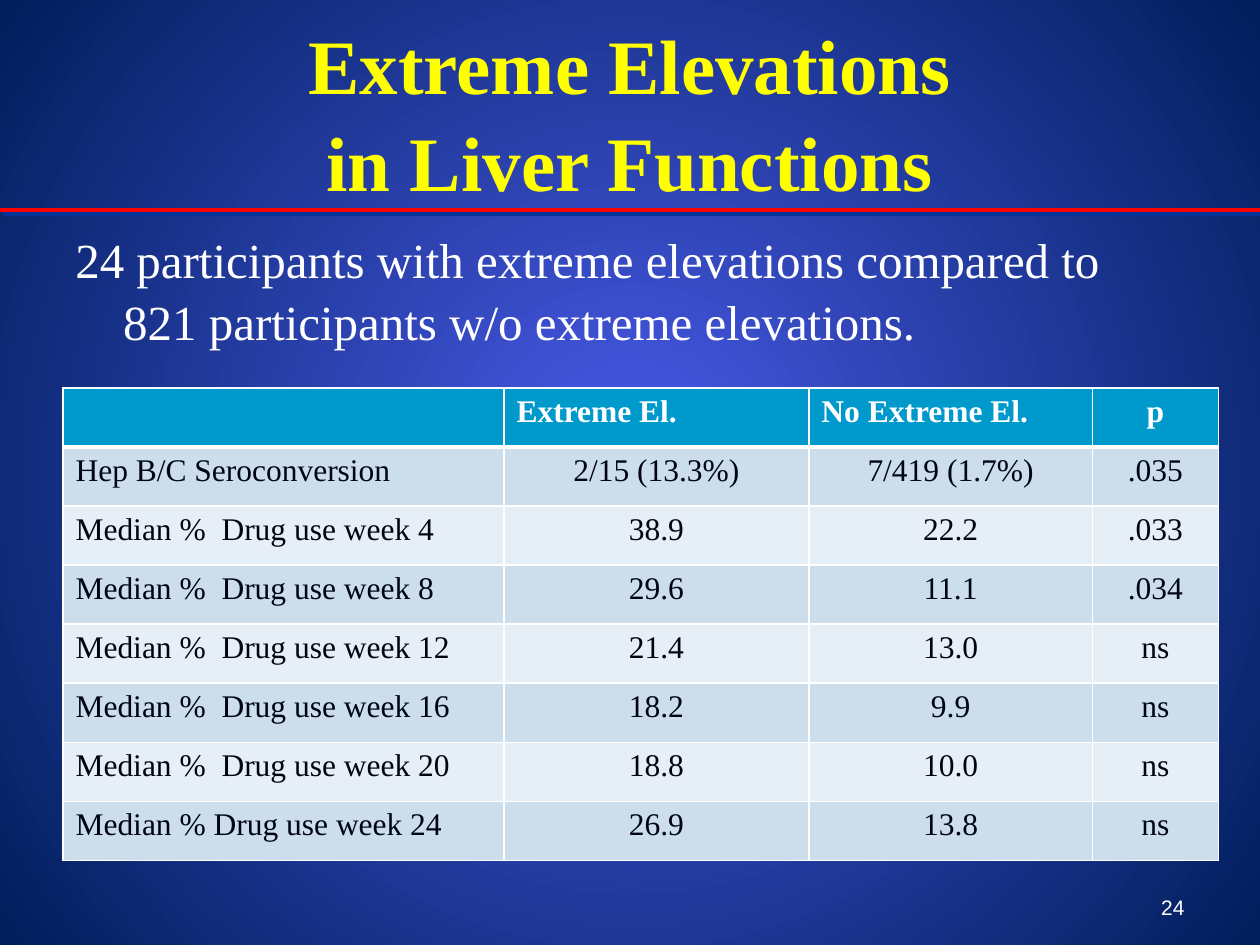
from dataclasses import dataclass
from pptx import Presentation
from pptx.dml.color import RGBColor as RGB
from pptx.enum.shapes import MSO_CONNECTOR as Link
from pptx.enum.text import MSO_ANCHOR as Anchor, PP_ALIGN as Align
from pptx.oxml import parse_xml as make
from pptx.oxml.ns import nsdecls
from pptx.util import Inches, Pt

HUES = {
    "glow": "4A5AE9", "night": "001E5B", "title": "FFFF00", "white": "FFFFFF",
    "rule": "FF0000", "shade": "003399", "head": "0099CC", "odd": "CCDEEC",
    "even": "E7EFF6", "ink": "000514",
}
SERIF = "Times New Roman"
COLS = (3.5, 2.42, 2.25, 1)
HIGH = 3.75
ROWS = (
    ("", "Extreme El.", "No Extreme El.", "p"),
    ("Hep B/C Seroconversion", "2/15 (13.3%)", "7/419 (1.7%)", ".035"),
    ("Median %  Drug use week 4", "38.9", "22.2", ".033"),
    ("Median %  Drug use week 8", "29.6", "11.1", ".034"),
    ("Median %  Drug use week 12", "21.4", "13.0", "ns"),
    ("Median %  Drug use week 16", "18.2", "9.9", "ns"),
    ("Median %  Drug use week 20", "18.8", "10.0", "ns"),
    ("Median % Drug use week 24", "26.9", "13.8", "ns"),
)


@dataclass
class Style:
    size: float
    hue: str
    font: str = SERIF
    bold: bool = False
    align: Align = Align.LEFT
    lead: float = 1.0


@dataclass
class Note:
    text: str
    box: tuple[float, float, float, float]
    style: Style
    anchor: Anchor = Anchor.TOP
    hang: float = 0


NOTES = (
    Note("Extreme Elevations\vin Liver Functions", (0.5, 0.25, 9, 1.25),
         Style(44, "title", bold=True, align=Align.CENTER, lead=1.05), Anchor.MIDDLE),
    Note("24 participants with extreme elevations compared to "
         "821 participants w/o extreme elevations.", (0.5, 1.75, 9, 1.2),
         Style(28, "white", lead=1.05), hang=0.38),
    Note("24", (7.17, 6.83, 2.33, 0.52),
         Style(12, "white", "Arial", align=Align.RIGHT), Anchor.BOTTOM),
)


def tint(name: str) -> RGB:
    return RGB.from_string(HUES[name])


def write(frame, text: str, style: Style):
    para = frame.paragraphs[0]
    para.text = text
    para.alignment = style.align
    para.line_spacing = style.lead
    para.font.color.rgb = tint(style.hue)
    looks = {"size": Pt(style.size), "name": style.font, "bold": style.bold}
    for run in para.runs:
        run.font.color.rgb = tint(style.hue)
        for key, value in looks.items():
            setattr(run.font, key, value)
    return para


def add_note(slide, note: Note) -> None:
    frame = slide.shapes.add_textbox(*map(Inches, note.box)).text_frame
    for key, value in {"word_wrap": True, "vertical_anchor": note.anchor}.items():
        setattr(frame, key, value)
    para = write(frame, note.text, note.style)
    if note.hang:
        props = para._p.get_or_add_pPr()
        props.set("marL", str(Inches(note.hang)))
        props.set("indent", str(-Inches(note.hang)))


def add_glow(slide) -> None:
    fill = slide.background.fill
    fill.gradient()
    for stop, hue, spot in zip(fill.gradient_stops, ("glow", "night"), (0, 1)):
        stop.color.rgb = tint(hue)
        stop.position = spot
    grad = slide.background._cSld.bg.bgPr.find(".//{*}gradFill")
    grad.replace(grad.find("{*}lin"), make(
        f'<a:path {nsdecls("a")} path="circle">'
        '<a:fillToRect l="50000" t="50000" r="50000" b="50000"/></a:path>'))


def add_rule(slide) -> None:
    ends = map(Inches, (0, 1.67, 10, 1.67))
    rule = slide.shapes.add_connector(Link.STRAIGHT, *ends)
    rule.line.color.rgb = tint("rule")
    rule.line.width = Pt(2.25)
    rule._element.spPr.append(make(
        f'<a:effectLst {nsdecls("a")}><a:outerShdw dist="{Pt(2.8)}" dir="2700000">'
        f'<a:srgbClr val="{HUES["shade"]}"/></a:outerShdw></a:effectLst>'))


def edge(cell, sides: dict[str, float]) -> None:
    props = cell._tc.get_or_add_tcPr()
    for spot, (side, width) in enumerate(sides.items()):
        props.insert(spot, make(
            f'<a:ln{side} {nsdecls("a")} w="{Pt(width)}"><a:solidFill>'
            f'<a:srgbClr val="{HUES["white"]}"/></a:solidFill></a:ln{side}>'))


def add_grid(slide) -> None:
    box = map(Inches, (0.5, 3.08, sum(COLS), HIGH))
    grid = slide.shapes.add_table(len(ROWS), len(COLS), *box).table
    for col, width in zip(grid.columns, COLS):
        col.width = Inches(width)
    for r, row in enumerate(ROWS):
        grid.rows[r].height = Inches(HIGH / len(ROWS))
        top = r == 0
        band = "head" if top else "odd" if r % 2 else "even"
        for c, text in enumerate(row):
            cell = grid.cell(r, c)
            cell.fill.solid()
            cell.fill.fore_color.rgb = tint(band)
            left = c < 3 if top else c == 0
            write(cell.text_frame, text, Style(
                18, "white" if top else "ink", bold=top,
                align=Align.LEFT if left else Align.CENTER))
            edge(cell, {"L": 1, "R": 1, "T": 3 if r == 1 else 1, "B": 3 if top else 1})


def main() -> None:
    """Build the liver function slide."""
    deck = Presentation()
    for key, value in {"slide_width": 10, "slide_height": 7.5}.items():
        setattr(deck, key, Inches(value))
    slide = deck.slides.add_slide(deck.slide_layouts[6])
    add_glow(slide)
    for note in NOTES:
        add_note(slide, note)
    add_rule(slide)
    add_grid(slide)
    deck.save("out.pptx")


if __name__ == "__main__":
    main()
